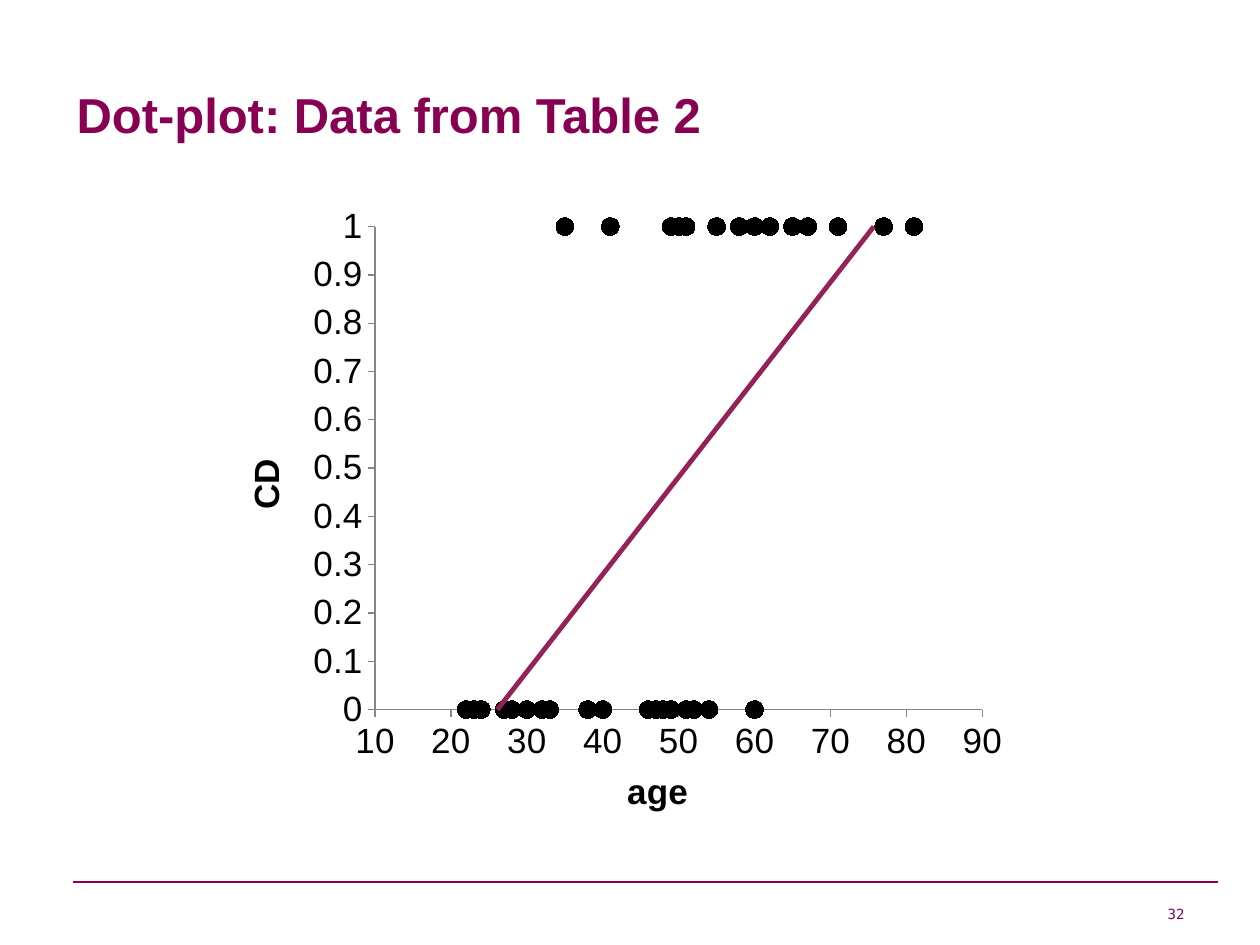
from lxml import etree
from pptx import Presentation
from pptx.chart.data import XyChartData
from pptx.dml.color import RGBColor
from pptx.enum import chart as ch, text
from pptx.oxml import parse_xml
from pptx.oxml.ns import nsdecls, qn
from pptx.util import Inches, Pt

PLUM = RGBColor(0x87, 0x00, 0x52)
NUMBER = RGBColor(0x82, 0x00, 0x60)
BLACK = RGBColor(0, 0, 0)
GREY = RGBColor(0x86, 0x86, 0x86)
TREND = "952157"

AGES_WITHOUT_CD = [22, 23, 24, 27, 28, 30, 30, 32, 33, 38, 40, 46, 47, 48, 49,
                   51, 52, 54, 60]
AGES_WITH_CD = [35, 41, 49, 50, 51, 55, 58, 60, 62, 65, 67, 71, 77, 81]
POINTS = sorted([(age, 0) for age in AGES_WITHOUT_CD]
                + [(age, 1) for age in AGES_WITH_CD])
PLOT = {"x": 0.18, "y": 0.05, "w": 0.77, "h": 0.77}


def add_text(s, words, box, size, font, color, bold=False,
             align=text.PP_ALIGN.LEFT):
    tf = s.shapes.add_textbox(*map(Inches, box)).text_frame
    tf.word_wrap = True
    tf.vertical_anchor = text.MSO_ANCHOR.MIDDLE
    p = tf.paragraphs[0]
    p.text = words
    p.alignment = align
    p.font.size, p.font.name, p.font.bold = Pt(size), font, bold
    p.font.color.rgb = color


def style_axis(axis, title, low, high, step):
    axis.minimum_scale, axis.maximum_scale, axis.major_unit = low, high, step
    axis.has_major_gridlines = False
    axis.major_tick_mark = ch.XL_TICK_MARK.OUTSIDE
    axis.tick_labels.font.size = Pt(20)
    axis.tick_labels.number_format = "General"
    axis.tick_labels.number_format_is_linked = False
    axis.format.line.color.rgb = GREY
    axis.format.line.width = Pt(0.75)
    tf = axis.axis_title.text_frame
    tf.text = title
    font = tf.paragraphs[0].font
    font.size, font.bold, font.name = Pt(20), True, "Arial"
    font.color.rgb = BLACK
    return tf


def set_plot_area(chart):
    """Fix the inner plot area as fractions of the chart."""
    area = chart.plots[0]._element.getparent()
    for old in area.findall(qn("c:layout")):
        area.remove(old)
    places = "".join(f'<c:{k} val="{v}"/>' for k, v in PLOT.items())
    area.insert(0, parse_xml(
        f'<c:layout {nsdecls("c")}><c:manualLayout>'
        '<c:layoutTarget val="inner"/><c:xMode val="edge"/>'
        f'<c:yMode val="edge"/>{places}</c:manualLayout></c:layout>'))


def add_trend(series):
    series._element.find(qn("c:xVal")).addprevious(parse_xml(
        f'<c:trendline {nsdecls("c", "a")}><c:spPr><a:ln w="{Pt(2.75)}">'
        f'<a:solidFill><a:srgbClr val="{TREND}"/></a:solidFill></a:ln></c:spPr>'
        '<c:trendlineType val="linear"/><c:dispRSqr val="0"/>'
        '<c:dispEq val="0"/></c:trendline>'))


def add_dot_plot(s):
    data = XyChartData()
    dots = data.add_series("Series 1")
    for age, cd in POINTS:
        dots.add_data_point(age, cd)
    box = map(Inches, (1.85, 1.55, 6.26, 4.98))
    chart = s.shapes.add_chart(ch.XL_CHART_TYPE.XY_SCATTER, *box, data).chart
    chart.has_legend = chart.has_title = False
    chart.font.name, chart.font.size = "Arial", Pt(10)
    chart.font.color.rgb = BLACK
    chart.plots[0].vary_by_categories = False
    style_axis(chart.category_axis, "age", 10, 90, 10)
    tf = style_axis(chart.value_axis, "CD", 0, 1, 0.1)
    tf._txBody.bodyPr.set("rot", "-5400000")
    tf._txBody.bodyPr.set("vert", "horz")
    set_plot_area(chart)

    series = chart.plots[0].series[0]
    series.smooth = False
    series.format.line.fill.background()
    marker = series.marker
    marker.style, marker.size = ch.XL_MARKER_STYLE.CIRCLE, 10
    marker.format.fill.solid()
    marker.format.fill.fore_color.rgb = BLACK
    marker.format.line.color.rgb = BLACK
    add_trend(series)


def main():
    prs = Presentation()
    prs.slide_width, prs.slide_height = Inches(10), Inches(7.5)
    s = prs.slides.add_slide(prs.slide_layouts[6])
    rule = s.shapes.add_connector(1, *map(Inches, (0.58, 7, 9.67, 7)))
    rule.line.color.rgb = PLUM
    rule.line.width = Pt(0.75)
    etree.SubElement(rule._element.spPr, qn("a:effectLst"))
    add_text(s, "32", (7.17, 7.14, 2.33, 0.22), 8, "DejaVu Sans Mono", NUMBER,
             align=text.PP_ALIGN.RIGHT)
    add_text(s, "Dot-plot: Data from Table 2", (0.51, 0.28, 8.5, 1.25), 28,
             "Arial", PLUM, bold=True)
    add_dot_plot(s)
    prs.save("out.pptx")


if __name__ == "__main__":
    main()
